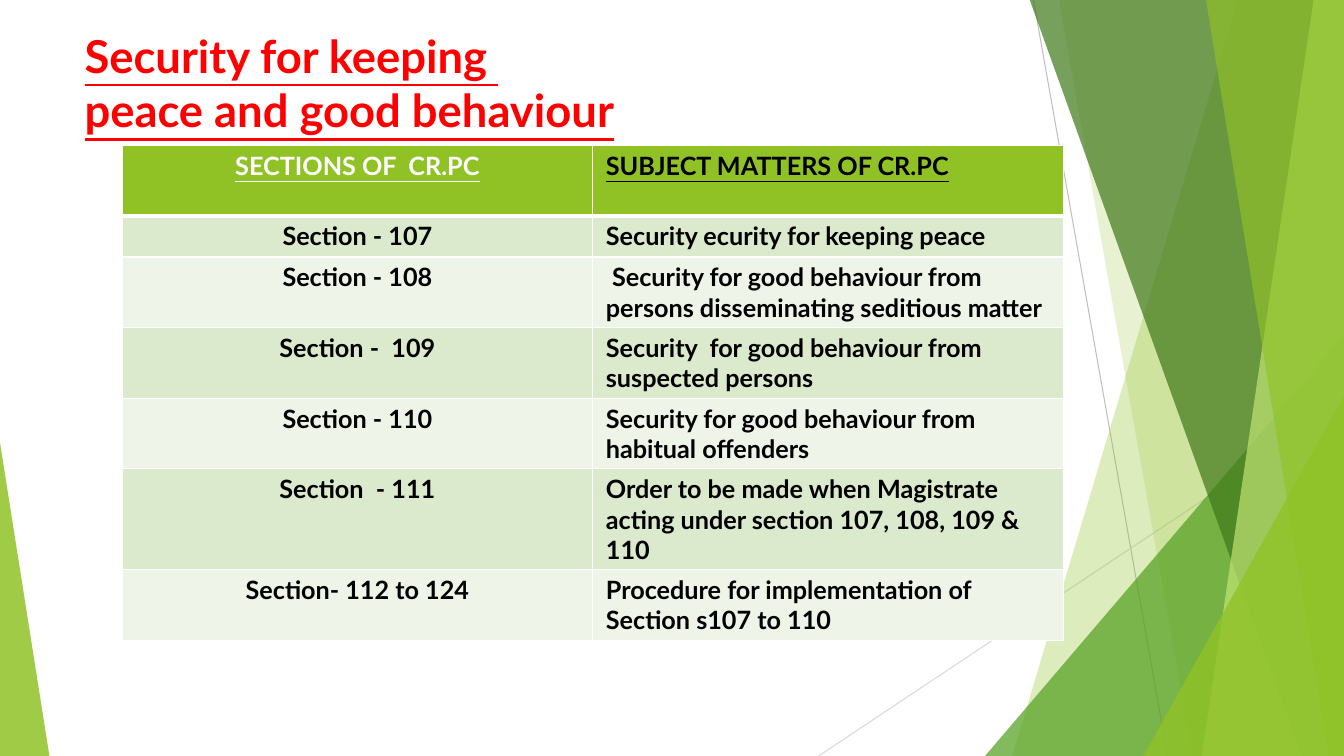
from lxml import etree
from pptx import Presentation
from pptx.dml.color import RGBColor
from pptx.enum.shapes import MSO_CONNECTOR, MSO_SHAPE
from pptx.enum.text import PP_ALIGN
from pptx.oxml.ns import qn
from pptx.util import Inches, Pt

STRAIGHT = MSO_CONNECTOR.STRAIGHT
TRIANGLE = MSO_SHAPE.ISOSCELES_TRIANGLE
CENTER, LEFT = PP_ALIGN.CENTER, PP_ALIGN.LEFT
FONT = "Lato"
COLORS = {
    "white": "FFFFFF", "black": "000000", "red": "FF0000",
    "grey": "BFBFBF", "pale grey": "D9D9D9",
    "lime": "90C226", "green": "54A021", "dark green": "3F7819", "light lime": "C0E474",
    "odd row": "DBE9CD", "even row": "EEF4E8",
}


def rgb(name):
    return RGBColor.from_string(COLORS[name])


def add_run(paragraph, text, size, color, underline):
    run = paragraph.add_run()
    run.text = text
    run.font.name = FONT
    run.font.size = Pt(size)
    run.font.bold = True
    run.font.underline = underline
    run.font.color.rgb = rgb(color)


prs = Presentation()
prs.slide_width, prs.slide_height = Inches(13.33), Inches(7.5)
slide = prs.slides.add_slide(prs.slide_layouts[6])
shapes = slide.shapes

# Thin crossing lines behind the green facets
for x1, y1, x2, y2, color in [(10.25, 0, 11.58, 7.5, "grey"),
                              (13.33, 4.03, 8.12, 7.5, "pale grey")]:
    ray = shapes.add_connector(STRAIGHT, Inches(x1), Inches(y1), Inches(x2), Inches(y2))
    ray.line.color.rgb = rgb(color)
    ray.line.width = Pt(0.75)
    etree.SubElement(ray._element.spPr, qn("a:effectLst"))

# Bands: (top x, bottom x), reaching to the right edge.
# Triangles: (left, top, width, apex position), standing on the bottom edge.
FACETS = [
    ((12.28, 10.04), "lime", 30),
    ((10.5, 11.83), "lime", 20),
    ((9.77, 3.33, 3.56, 1), "green", 72),
    ((10.21, 12.91), "dark green", 70),
    ((13.03, 11.92), "light lime", 70),
    ((11.96, 13.18), "lime", 65),
    ((11.34, 3.93, 1.99, 1), "lime", 80),
    ((0, 4.39, 0.49, 0), "lime", 85),
]
for geometry, color, opacity in FACETS:
    if len(geometry) == 2:
        top_x, bottom_x = geometry
        outline = shapes.build_freeform(Inches(top_x), Inches(-0.01))
        outline.add_line_segments([(Inches(x), Inches(y)) for x, y in
                                   [(13.33, -0.01), (13.33, 7.5), (bottom_x, 7.5)]])
        facet = outline.convert_to_shape()
    else:
        left, top, width, apex = geometry
        facet = shapes.add_shape(TRIANGLE, Inches(left), Inches(top),
                                 Inches(width), Inches(7.5 - top))
        facet.adjustments[0] = apex
    facet.shadow.inherit = False
    facet.line.fill.background()
    facet.fill.solid()
    facet.fill.fore_color.rgb = rgb(color)
    solid = facet._element.spPr.find(qn("a:solidFill"))
    etree.SubElement(solid[0], qn("a:alpha"), val=str(opacity * 1000))

# Title
title = shapes.add_textbox(Inches(0.74), Inches(0.23), Inches(9.4), Inches(1.17))
title.text_frame.word_wrap = True
heading = title.text_frame.paragraphs[0]
add_run(heading, "Security for keeping ", 32.4, "red", True)
heading.add_line_break()
add_run(heading, "peace and good behaviour", 32.4, "red", True)

# Table of sections
SECTIONS = [
    ("SECTIONS OF  CR.PC", "SUBJECT MATTERS OF CR.PC", 0.7),
    ("Section - 107", "Security ecurity for keeping peace", 0.41),
    ("Section - 108",
     " Security for good behaviour from persons disseminating seditious matter", 0.7),
    ("Section -  109", "Security  for good behaviour from  suspected persons", 0.7),
    ("Section - 110", "Security for good behaviour from habitual offenders", 0.7),
    ("Section  - 111",
     "Order to be made when Magistrate  acting under section 107, 108, 109 & 110", 1),
    ("Section- 112 to 124", "Procedure for implementation of Section s107 to 110", 0.7),
]
table = shapes.add_table(len(SECTIONS), 2, Inches(1.21), Inches(1.44),
                         Inches(9.34), Inches(4.91)).table
for r, (section, subject, height) in enumerate(SECTIONS):
    table.rows[r].height = Inches(height)
    is_header = r == 0
    row_fill = "lime" if is_header else ("odd row" if r % 2 else "even row")
    for c, (text, align) in enumerate([(section, CENTER), (subject, LEFT)]):
        cell = table.cell(r, c)
        cell.margin_left = cell.margin_right = Inches(0.13)
        cell.margin_top = cell.margin_bottom = Inches(0.05)
        entry = cell.text_frame.paragraphs[0]
        entry.alignment = align
        add_run(entry, text, 18, "white" if is_header and c == 0 else "black", is_header)

        properties = cell._tc.get_or_add_tcPr()
        for side in ("lnL", "lnR", "lnT", "lnB"):
            header_rule = (is_header and side == "lnB") or (r == 1 and side == "lnT")
            border = etree.SubElement(properties, qn(f"a:{side}"),
                                      w=str(Pt(3 if header_rule else 1)))
            border_fill = etree.SubElement(border, qn("a:solidFill"))
            etree.SubElement(border_fill, qn("a:srgbClr"), val=COLORS["white"])
        cell.fill.solid()
        cell.fill.fore_color.rgb = rgb(row_fill)

prs.save("out.pptx")
